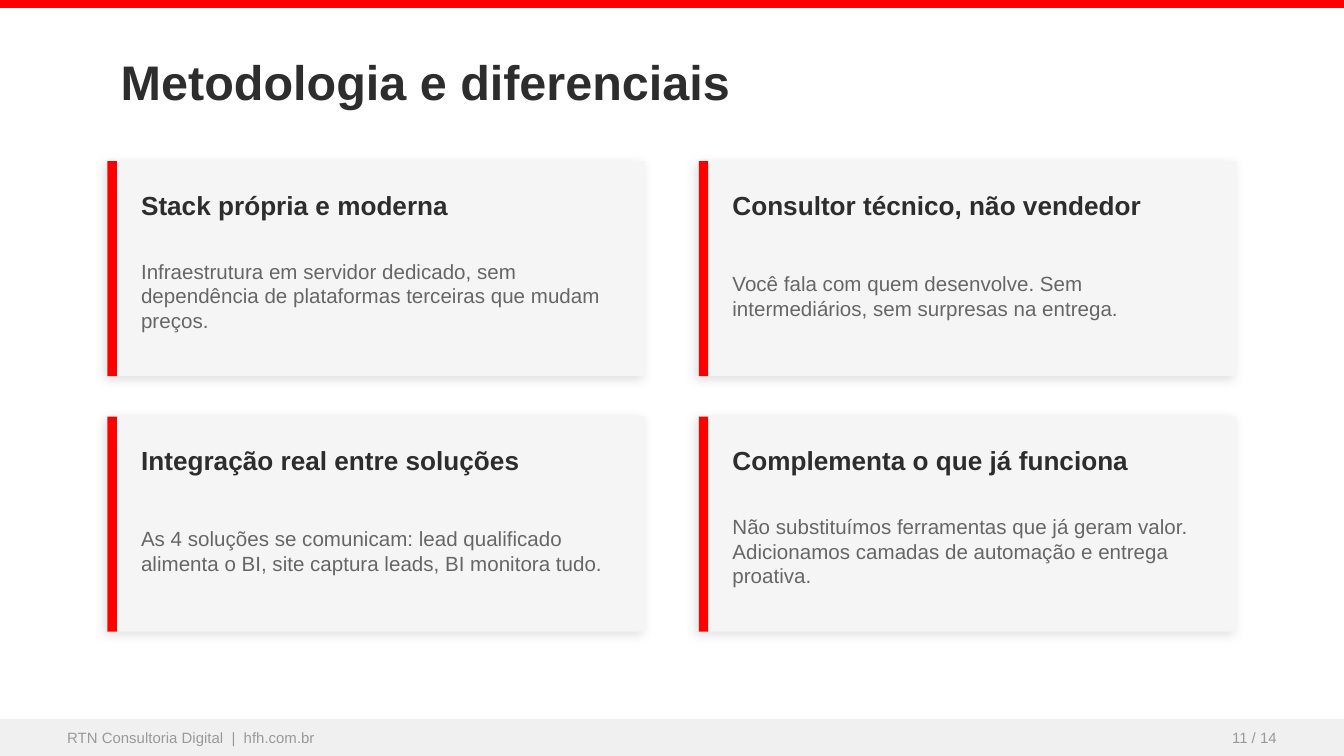
import itertools

import lxml.etree
import pptx
import pptx.dml.color
import pptx.enum.shapes
import pptx.enum.text
import pptx.oxml.ns
import pptx.util

deck = pptx.Presentation()
deck.slide_width = pptx.util.Inches(10)
deck.slide_height = deck.slide_width * 9 // 16
slide = deck.slides.add_slide(deck.slide_layouts[6])

# The grid has 100 square cells across the slide; all lengths count cells.
cell = deck.slide_width // 100
qn = pptx.oxml.ns.qn
red, dark, grey, pale = "FF0000", "2D2D2D", "666666", "999999"


def block(x, y, w, h, fill):
    shape = slide.shapes.add_shape(
        pptx.enum.shapes.MSO_SHAPE.RECTANGLE, *(int(n * cell) for n in (x, y, w, h)))
    shape.shadow.inherit = False
    shape.fill.solid()
    shape.fill.fore_color.rgb = pptx.dml.color.RGBColor.from_string(fill)
    shape.line.fill.background()
    return shape


def label(x, y, w, h, text, size, color, bold=False, inset=0):
    """Add a wrapped, vertically centred text box and return its paragraph."""
    frame = slide.shapes.add_textbox(*(int(n * cell) for n in (x, y, w, h))).text_frame
    frame.word_wrap = True
    frame.vertical_anchor = pptx.enum.text.MSO_ANCHOR.MIDDLE
    frame.margin_left = frame.margin_right = int(inset * cell)
    frame.margin_top = frame.margin_bottom = int(inset * cell / 2)
    frame.text = text
    font = frame.paragraphs[0].runs[0].font
    font.name, font.size, font.bold = "Arial", pptx.util.Pt(size), bold
    font.color.rgb = pptx.dml.color.RGBColor.from_string(color)
    return frame.paragraphs[0]


# Header
block(0, 0, 100, 0.6, red)
label(8, 3, 84, 6, "Metodologia e diferenciais", 26, dark, True, inset=1)

# Cards, two by two
cards = [
    ("Stack própria e moderna",
     "Infraestrutura em servidor dedicado, sem dependência de plataformas "
     "terceiras que mudam preços."),
    ("Consultor técnico, não vendedor",
     "Você fala com quem desenvolve. Sem intermediários, sem surpresas na entrega."),
    ("Integração real entre soluções",
     "As 4 soluções se comunicam: lead qualificado alimenta o BI, site captura "
     "leads, BI monitora tudo."),
    ("Complementa o que já funciona",
     "Não substituímos ferramentas que já geram valor. Adicionamos camadas de "
     "automação e entrega proativa."),
]
wide, high, gap = 40, 16, (4, 3)
spots = itertools.product(range(2), range(2))
for (row, col), (head, body) in zip(spots, cards):
    x = 8 + col * (wide + gap[0])
    y = 12 + row * (high + gap[1])
    card = block(x, y, wide, high, "F5F5F5")
    glow = lxml.etree.SubElement(
        card._element.spPr.find(qn("a:effectLst")), qn("a:outerShdw"),
        blurRad=str(pptx.util.Pt(6)), dist=str(pptx.util.Pt(2)),
        dir=str(135 * 60000), algn="bl", rotWithShape="0")
    tint = lxml.etree.SubElement(glow, qn("a:srgbClr"), val="000000")
    lxml.etree.SubElement(tint, qn("a:alpha"), val="12000")
    block(x, y, 0.7, high, red)
    label(x + 2.5, y + 1.5, 35, 3.5, head, 14, dark, True)
    label(x + 2.5, y + 5.5, 35, 9, body, 11, grey)

# Footer
foot, tall = 53.5, 2.75
block(0, foot, 100, tall, "F0F0F0")
label(5, foot, 50, tall, "RTN Consultoria Digital  |  hfh.com.br", 8, pale)
page = label(75, foot, 20, tall, "11 / 14", 8, pale)
page.alignment = pptx.enum.text.PP_ALIGN.RIGHT

deck.save("out.pptx")
